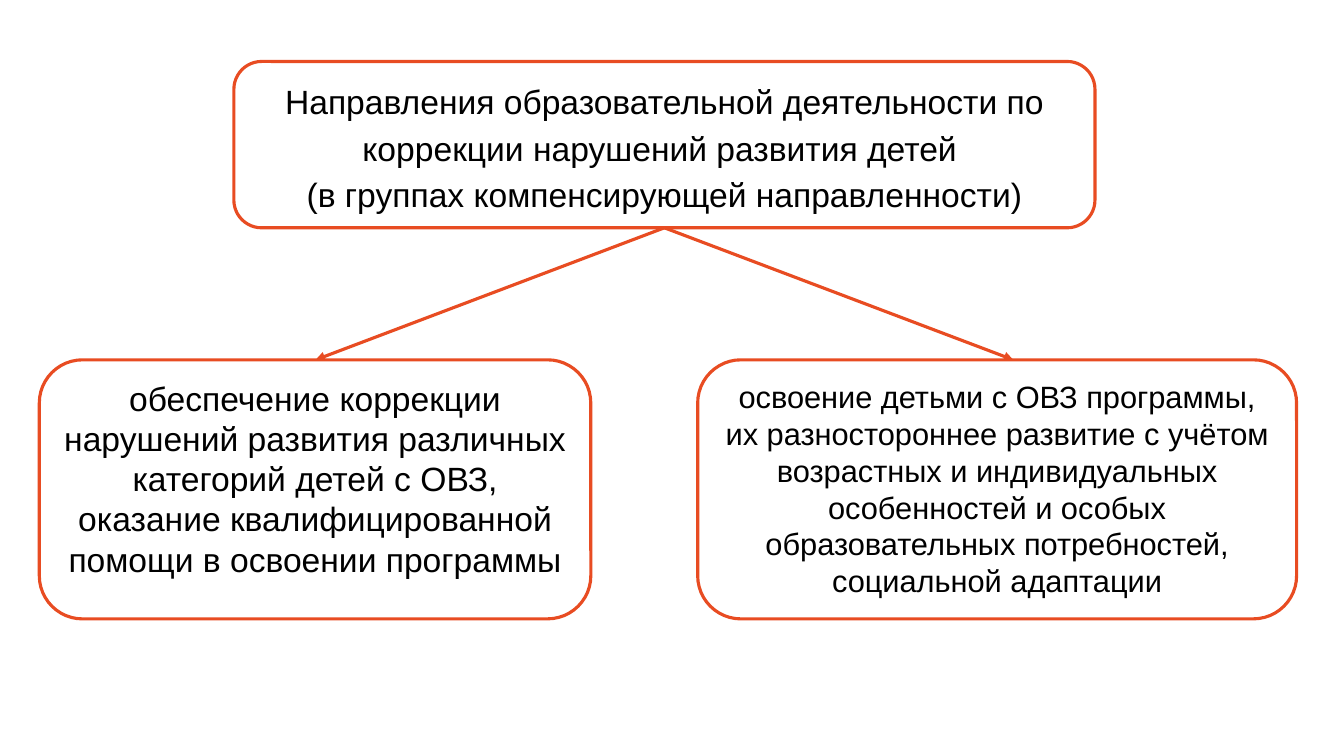
from lxml import etree
from pptx import Presentation
from pptx.dml.color import RGBColor
from pptx.enum.shapes import MSO_CONNECTOR, MSO_SHAPE
from pptx.enum.text import MSO_ANCHOR, PP_ALIGN
from pptx.oxml.ns import qn
from pptx.util import Pt

PX = 9144
ORANGE = RGBColor(0xE8, 0x4C, 0x22)
WHITE = RGBColor(0xFF, 0xFF, 0xFF)
BLACK = RGBColor(0, 0, 0)
ROUNDED = MSO_SHAPE.ROUNDED_RECTANGLE
STRAIGHT = MSO_CONNECTOR.STRAIGHT
CENTER = PP_ALIGN.CENTER
TOP, MIDDLE = MSO_ANCHOR.TOP, MSO_ANCHOR.MIDDLE

TITLE_BOX = (232, 61, 854, 165)
GOAL_TOP, GOAL_HEIGHT = 357, 257
ARROW_SPREAD = 346
TITLE = [
    "Направления образовательной деятельности по коррекции нарушений развития детей ",
    "(в группах компенсирующей направленности)",
]
GOALS = [
    (39, 547, 24,
     "обеспечение коррекции нарушений развития различных категорий детей с ОВЗ, "
     "оказание квалифицированной помощи в освоении программы"),
    (692, 594, 22,
     "освоение детьми с ОВЗ программы, их разностороннее развитие с учётом "
     "возрастных и индивидуальных особенностей и особых образовательных "
     "потребностей, социальной адаптации"),
]


def px(*lengths):
    return [n * PX for n in lengths]


def style_line(line):
    line.color.rgb = ORANGE
    line.width = Pt(2.25)


def add_box(slide, box, texts, size, anchor, spacing=None):
    sp = slide.shapes.add_shape(ROUNDED, *px(*box))
    sp.shadow.inherit = False
    sp.fill.solid()
    sp.fill.fore_color.rgb = WHITE
    style_line(sp.line)
    tf = sp.text_frame
    tf.word_wrap = True
    tf.vertical_anchor = anchor
    for i, text in enumerate(texts):
        p = tf.add_paragraph() if i else tf.paragraphs[0]
        p.text = text
        p.alignment = CENTER
        p.line_spacing = spacing
        p.font.name = "Arial"
        p.font.size = Pt(size)
        p.font.color.rgb = BLACK


def add_arrow(slide, start, end):
    cxn = slide.shapes.add_connector(STRAIGHT, *px(*start, *end))
    style_line(cxn.line)
    spPr = cxn._element.spPr
    etree.SubElement(spPr.find(qn("a:ln")), qn("a:tailEnd"), type="triangle")
    etree.SubElement(spPr, qn("a:effectLst"))


def add_scheme(slide):
    add_box(slide, TITLE_BOX, TITLE, 24, MIDDLE, 1.15)
    for left, width, size, text in GOALS:
        add_box(slide, (left, GOAL_TOP, width, GOAL_HEIGHT), [text], size, TOP)
    left, top, width, height = TITLE_BOX
    start = (left + width // 2, top + height)
    for side in (-1, 1):
        add_arrow(slide, start, (start[0] + side * ARROW_SPREAD, GOAL_TOP))


def main():
    prs = Presentation()
    prs.slide_width, prs.slide_height = px(1333, 750)
    add_scheme(prs.slides.add_slide(prs.slide_layouts[6]))
    prs.save("out.pptx")


if __name__ == "__main__":
    main()
